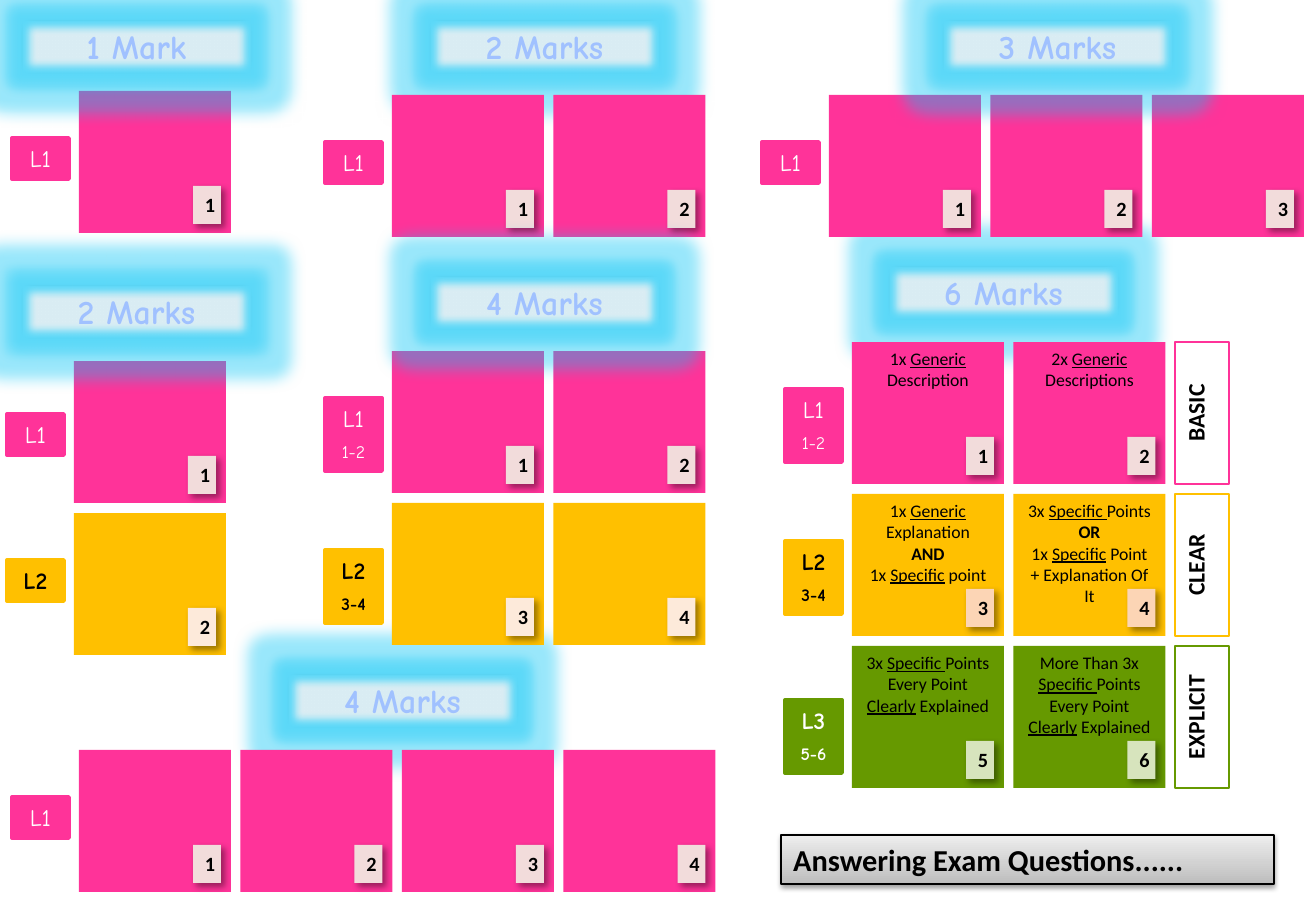
import pptx
import pptx.util
import pptx.dml.color
import pptx.enum.shapes
import pptx.enum.text
import pptx.oxml
import pptx.oxml.ns

PX = 7526
HUES = {
    "pink": "FF3399", "amber": "FFC000", "green": "669900",
    "rose": "F2DCDB", "peach": "FCD5B5", "cream": "FDEADA", "lime": "D7E4BD",
    "ice": "DBEEF4", "sky": "A0C1FF", "glow": "00C4F5",
    "black": "000000", "white": "FFFFFF",
    "dark": "BDBDBD", "light": "EEEEEE",
}
ALIGN = pptx.enum.text.PP_ALIGN
WIDE, HIGH = 152, 142
STEP, DROP = 161.5, 152


class Board:
    def __init__(self, deck):
        self.slide = deck.slides.add_slide(deck.slide_layouts[5])

    def hue(self, name):
        return pptx.dml.color.RGBColor.from_string(HUES[name])

    def place(self, x, y, w, h):
        return [round(v * PX) for v in (x, y, w, h)]

    def effect(self, shape, kind, hue, alpha, **attrs):
        shape.shadow.inherit = False
        xml = "".join(f' {k}="{v}"' for k, v in attrs.items())
        space = pptx.oxml.ns.nsdecls("a")
        node = pptx.oxml.parse_xml(
            f'<a:{kind} {space}{xml}><a:srgbClr val="{HUES[hue]}">'
            f'<a:alpha val="{alpha * 1000}"/></a:srgbClr></a:{kind}>')
        effects = shape.element.spPr.find(pptx.oxml.ns.qn("a:effectLst"))
        effects.append(node)
        return effects

    def rect(self, x, y, w, h, fill=None, line=None, width=1.0):
        shape = self.slide.shapes.add_shape(
            pptx.enum.shapes.MSO_SHAPE.RECTANGLE, *self.place(x, y, w, h))
        shape.shadow.inherit = False
        if fill:
            shape.fill.solid()
            shape.fill.fore_color.rgb = self.hue(fill)
        else:
            shape.fill.background()
        if line:
            shape.line.color.rgb = self.hue(line)
            shape.line.width = pptx.util.Pt(width)
        else:
            shape.line.fill.background()
        shape.text_frame.vertical_anchor = pptx.enum.text.MSO_ANCHOR.TOP
        return shape

    def style(self, para, size, face="Calibri", hue="black", bold=False):
        para.alignment = ALIGN.CENTER
        font = para.font
        font.size, font.name, font.bold = pptx.util.Pt(size), face, bold
        font.color.rgb = self.hue(hue)

    def label(self, shape, text, size, **look):
        para = shape.text_frame.paragraphs[0]
        para.add_run().text = text
        self.style(para, size, **look)

    def head(self, x, y, text):
        shape = self.rect(x, y, 229, 53, "ice", "black")
        self.label(shape, text, 20, face="Comic Neue", hue="sky", bold=True)
        effects = self.effect(shape, "glow", "glow", 40, rad=228600)
        soft = pptx.oxml.parse_xml(
            f'<a:softEdge {pptx.oxml.ns.nsdecls("a")} rad="63500"/>')
        effects.append(soft)

    def tag(self, x, y, hue, level, span=None):
        shape = self.rect(x, y, 57, 73 if span else 41, hue, hue, 2.25)
        look = {"face": "Comic Neue", "bold": level != "L1",
                "hue": "black" if hue == "amber" else "white"}
        self.label(shape, level, 14, **look)
        if span:
            para = shape.text_frame.add_paragraph()
            para.text = span
            para.space_before = pptx.util.Pt(5)
            self.style(para, 10.5, **look)

    def badge(self, x, y, hue, number):
        shape = self.rect(x, y, 28, 38, hue)
        self.label(shape, str(number), 12, bold=True)
        self.effect(shape, "outerShdw", "black", 40,
                    blurRad=50800, dist=38100, dir=2700000, algn="tl")

    def note(self, shape, lines):
        frame = shape.text_frame
        for i, line in enumerate(lines):
            para = frame.add_paragraph() if i else frame.paragraphs[0]
            for j, part in enumerate(line.split("_")):
                if part:
                    run = para.add_run()
                    run.text = part
                    run.font.underline = j % 2 == 1
            self.style(para, 10.5, bold=line in ("AND", "OR"))

    def grid(self, x, y, cols, rows):
        for r, (hue, pale, level, span, shift, notes) in enumerate(rows):
            top = y + r * DROP
            self.tag(x - 67, top + shift, hue, level, span)
            for c in range(cols):
                left = x + c * STEP
                box = self.rect(left, top, WIDE, HIGH, hue)
                if notes:
                    self.note(box, notes[c])
                self.badge(left + 114, top + 95, pale, r * cols + c + 1)

    def side(self, x, y, hue, text):
        shape = self.rect(x, y, 54, HIGH, None, hue, 1.5)
        shape.element.txBody.bodyPr.set("vert", "vert270")
        self.label(shape, text, 14, bold=True)

    def title(self, x, y, w, h, text):
        shape = self.slide.shapes.title
        shape.left, shape.top, shape.width, shape.height = self.place(x, y, w, h)
        shape.fill.gradient()
        shape.fill.gradient_angle = 270
        for stop, name in zip(shape.fill.gradient_stops, ("light", "dark")):
            stop.color.rgb = self.hue(name)
        shape.line.color.rgb = self.hue("black")
        shape.line.width = pptx.util.Pt(0.75)
        self.effect(shape, "outerShdw", "black", 38,
                    blurRad=40000, dist=20000, dir=5400000)
        self.label(shape, text, 18, bold=True)
        shape.text_frame.paragraphs[0].alignment = ALIGN.LEFT
        shape.text_frame.vertical_anchor = pptx.enum.text.MSO_ANCHOR.MIDDLE


def main():
    deck = pptx.Presentation()
    deck.slide_width, deck.slide_height = 1316 * PX, 911 * PX
    board = Board(deck)
    basic = ("pink", "rose", "L1", None, 47, None)

    board.head(889, 266, "6 Marks")
    board.grid(852, 342, 2, [
        ("pink", "rose", "L1", "1-2", 47,
         [["1x _Generic _Description"], ["2x _Generic _Descriptions"]]),
        ("amber", "peach", "L2", "3-4", 47,
         [["1x _Generic_ Explanation", "AND", "1x _Specific_ point"],
          ["3x _Specific _Points", "OR",
           "1x _Specific_ Point + Explanation Of It"]]),
        ("green", "lime", "L3", "5-6", 54,
         [["3x _Specific _Points Every Point _Clearly_ Explained"],
          ["More Than 3x _Specific _Points Every Point _Clearly_ Explained"]]),
    ])
    sides = [("pink", "BASIC"), ("amber", "CLEAR"), ("green", "EXPLICIT")]
    for i, (hue, text) in enumerate(sides):
        board.side(1175, 342 + i * DROP, hue, text)

    board.head(288, 674, "4 Marks")
    board.grid(79, 750, 4, [basic])
    board.grid(79, 91, 1, [basic])
    board.head(22, 20, "1 Mark")
    board.head(430, 20, "2 Marks")
    board.grid(392, 95, 2, [basic])
    board.grid(829, 95, 3, [basic])
    board.head(943, 20, "3 Marks")
    board.grid(392, 351, 2, [
        ("pink", "rose", "L1", "1-2", 47, None),
        ("amber", "cream", "L2", "3-4", 47, None)])
    board.head(430, 276, "4 Marks")
    board.grid(74, 361, 1, [
        ("pink", "rose", "L1", None, 53, None),
        ("amber", "cream", "L2", None, 47, None)])
    board.head(22, 285, "2 Marks")
    board.title(781, 835, 493, 49, "Answering Exam Questions......")
    deck.save("out.pptx")


if __name__ == "__main__":
    main()
